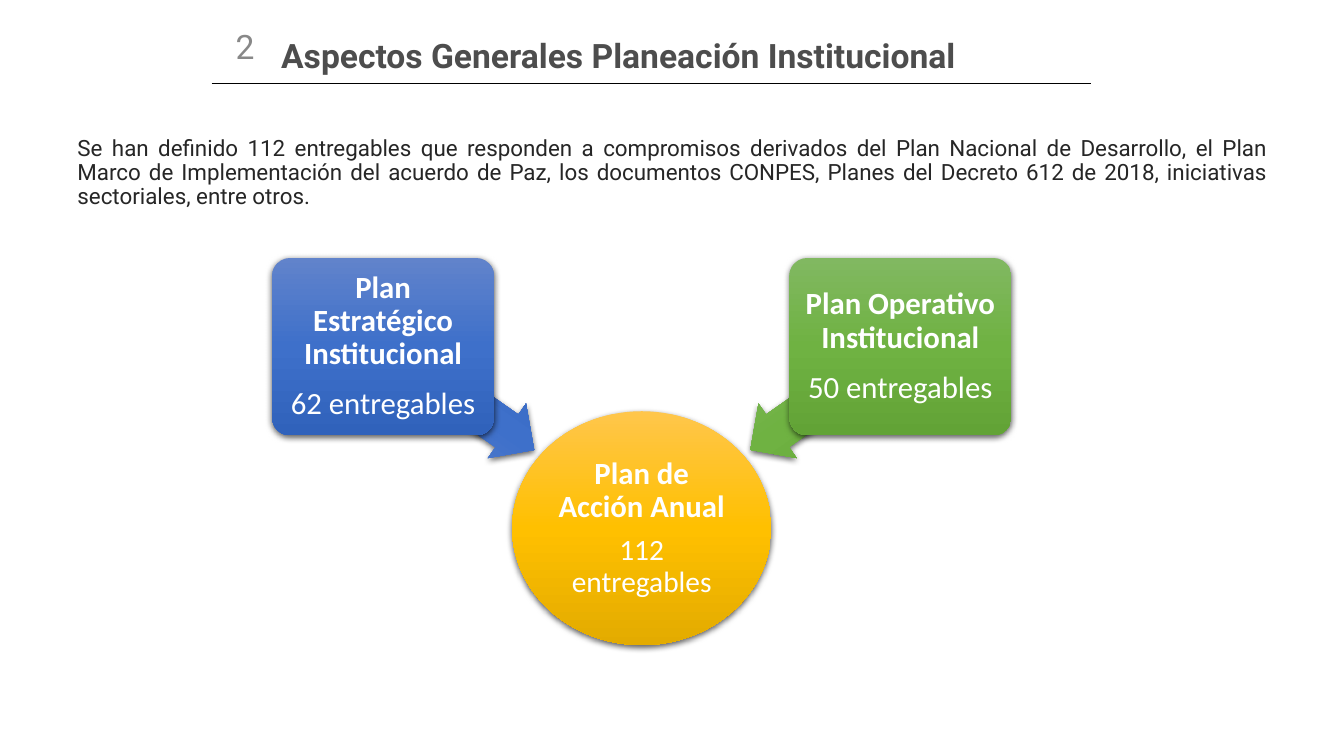
import pptx
import pptx.util
import pptx.dml.color
import pptx.enum.shapes
import pptx.enum.text
import pptx.oxml
import pptx.oxml.ns

PX = 9144
ALIGN = pptx.enum.text.PP_ALIGN
ANCHOR = pptx.enum.text.MSO_ANCHOR
SHAPE = pptx.enum.shapes.MSO_SHAPE
NAMESPACE = pptx.oxml.ns.nsdecls("a")
BLUE = ["6183CB", "3E70CA", "3062BB"]
GREEN = ["81B861", "6FB242", "62A336"]
GOLD = ["FFC64B", "FFC000", "E3AB00"]


def write(shape, text, size=16, font="Roboto", color="FFFFFF", bold=False,
          align=ALIGN.CENTER, anchor=ANCHOR.TOP, after=0, inset=None, first=True):
    frame = shape.text_frame
    frame.word_wrap = True
    frame.vertical_anchor = anchor
    if inset is not None:
        frame.margin_left = frame.margin_right = inset * PX
        frame.margin_top = frame.margin_bottom = inset * PX
    paragraph = frame.paragraphs[0] if first else frame.add_paragraph()
    paragraph.alignment = align
    paragraph.line_spacing = 0.9
    paragraph.space_after = pptx.util.Pt(after)
    run = paragraph.add_run()
    run.text = text
    run.font.name = font
    run.font.size = pptx.util.Pt(size)
    run.font.bold = bold
    run.font.color.rgb = pptx.dml.color.RGBColor.from_string(color)


def add_shaded(kind, box, colors, adjustments=(), rotation=0):
    shape = slide.shapes.add_shape(kind, *[value * PX for value in box])
    shape.rotation = rotation
    for index, value in enumerate(adjustments):
        shape.adjustments[index] = value
    shape.line.fill.background()
    stops = "".join(
        f'<a:gs pos="{index * 50000}"><a:srgbClr val="{color}"/></a:gs>'
        for index, color in enumerate(colors))
    properties = shape.fill._xPr
    properties.insert_element_before(pptx.oxml.parse_xml(
        f'<a:gradFill {NAMESPACE} rotWithShape="1"><a:gsLst>{stops}</a:gsLst>'
        '<a:lin ang="5400000" scaled="0"/></a:gradFill>'), "a:ln")
    properties.append(pptx.oxml.parse_xml(
        f'<a:effectLst {NAMESPACE}><a:outerShdw blurRad="57150" dist="19050" '
        'dir="5400000" algn="ctr" rotWithShape="0"><a:srgbClr val="000000">'
        '<a:alpha val="63000"/></a:srgbClr></a:outerShdw></a:effectLst>'))
    return shape


presentation = pptx.Presentation()
presentation.slide_width = 1333 * PX
presentation.slide_height = 750 * PX
slide = presentation.slides.add_slide(presentation.slide_layouts[6])

rule = slide.shapes.add_connector(
    pptx.enum.shapes.MSO_CONNECTOR.STRAIGHT, 210 * PX, 83 * PX, 1082 * PX, 83 * PX)
rule.line.width = pptx.util.Pt(1)
rule.line.color.rgb = pptx.dml.color.RGBColor.from_string("000000")
rule._element.spPr.append(pptx.oxml.parse_xml(f"<a:effectLst {NAMESPACE}/>"))

for box, text, style in [
    ((269, 26, 800, 63), "Aspectos Generales Planeación Institucional",
     dict(size=24, color="4D4D4D", bold=True, align=ALIGN.LEFT, anchor=ANCHOR.MIDDLE)),
    ((67, 131, 1200, 64),
     "Se han definido 112 entregables que responden a compromisos derivados del "
     "Plan Nacional de Desarrollo, el Plan Marco de Implementación del acuerdo de "
     "Paz, los documentos CONPES, Planes del Decreto 612 de 2018, iniciativas "
     "sectoriales, entre otros.",
     dict(color="262626", align=ALIGN.JUSTIFY)),
    ((209, 25, 68, 58), "2", dict(size=24, color="888888")),
]:
    write(slide.shapes.add_textbox(*[value * PX for value in box]), text, **style)

label = dict(font="Calibri", anchor=ANCHOR.MIDDLE)

annual_plan = add_shaded(SHAPE.OVAL, (508, 408, 257, 232), GOLD)
write(annual_plan, "Plan de Acción Anual", size=22, bold=True, after=8, inset=2, **label)
write(annual_plan, "112 entregables", size=21, after=8, first=False, **label)

for card_left, arrow_left, rotation, colors, name, count in [
    (270, 367, 215, BLUE, "Plan Estratégico Institucional", "62 entregables"),
    (783, 728, 325, GREEN, "Plan Operativo Institucional", "50 entregables"),
]:
    add_shaded(SHAPE.LEFT_ARROW, (arrow_left, 362, 179, 66), colors, (0.6, 0.5), rotation)
    card = add_shaded(SHAPE.ROUNDED_RECTANGLE, (card_left, 256, 220, 176), colors, (0.1,))
    write(card, name, size=22, bold=True, after=12, inset=5, **label)
    write(card, count, size=22, after=12, first=False, **label)

presentation.save("out.pptx")
